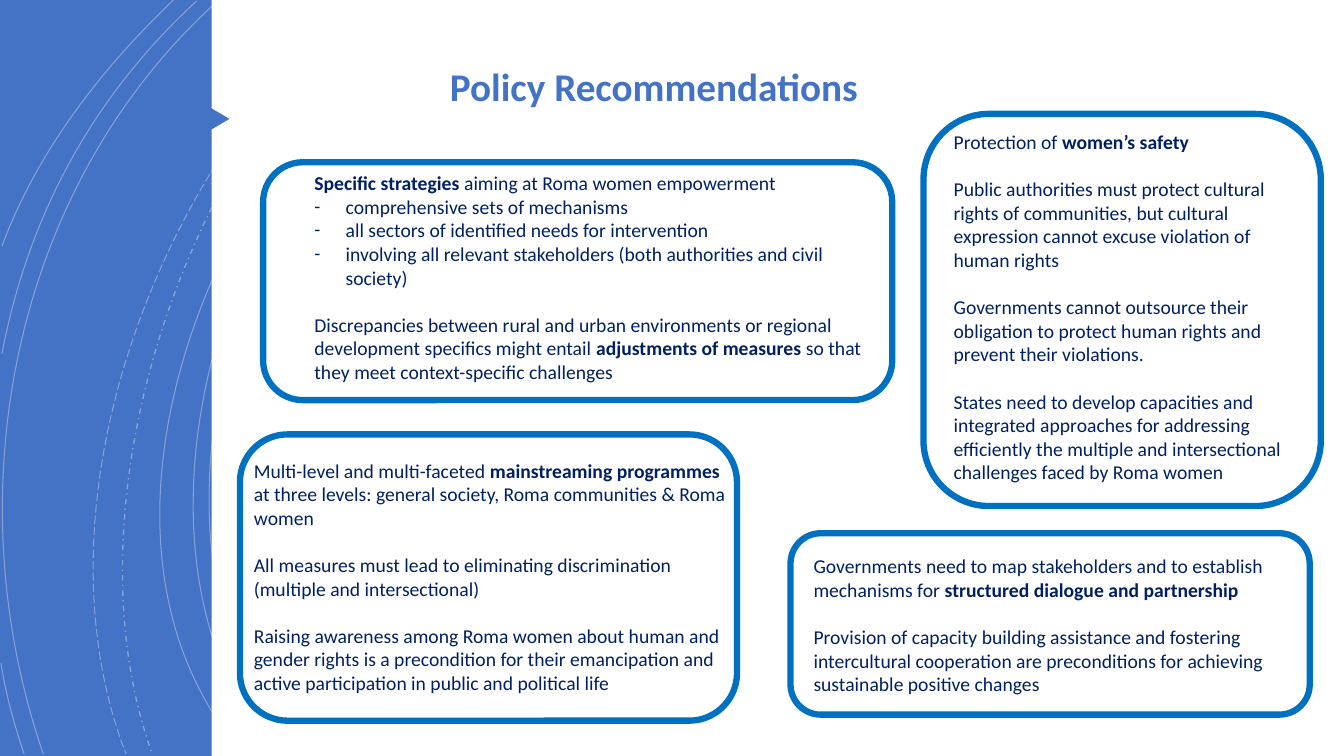
from dataclasses import dataclass
from typing import NamedTuple

from lxml.etree import SubElement
from pptx import Presentation
from pptx.dml.color import RGBColor
from pptx.enum.dml import MSO_LINE
from pptx.enum.shapes import MSO_SHAPE
from pptx.enum.text import MSO_AUTO_SIZE, PP_ALIGN
from pptx.oxml.ns import qn
from pptx.shapes.autoshape import Shape
from pptx.slide import Slide
from pptx.text.text import TextFrame, _Paragraph
from pptx.util import Inches, Pt

FONT = "Calibri"
BLUE, EDGE, NAVY, WHITE = "4472C4", "0070C0", "002060", "FFFFFF"
GAP = 17
INDENT = 0.31

Area = tuple[float, float, float, float]
Point = tuple[float, float]


class Run(NamedTuple):
    text: str
    bold: bool = False


@dataclass
class Para:
    runs: list[Run]
    gap: bool = False
    bullet: bool = False


@dataclass
class Card:
    frame: Area
    text: Area
    paras: list[Para]


@dataclass
class Arc:
    """A cubic curve: start, two control points, end."""
    points: tuple[Point, Point, Point, Point]
    dash: MSO_LINE = MSO_LINE.SOLID
    width: float = 0.75


ARCS = [
    Arc(((4.64, 0), (2.44, 1.33), (1.1, 5.41), (2.94, 7.48))),
    Arc(((4.51, 0), (2.31, 1.38), (0.97, 5.33), (2.72, 7.48))),
    Arc(((4.27, 0), (2.17, 1.47), (0.53, 5.29), (2.41, 7.48))),
    Arc(((3.63, 0), (1.76, 1.66), (0.65, 5.09), (1.51, 7.48)),
        MSO_LINE.DASH_DOT, 1),
    Arc(((3.51, 0), (1.57, 1.69), (0.29, 4.99), (1.25, 7.48)),
        MSO_LINE.LONG_DASH),
    Arc(((2.17, 0), (0.11, 1.85), (-0.46, 4.9), (0.43, 7.48))),
    Arc(((1.95, 0.01), (0.92, 0.96), (0.28, 2.14), (0.02, 3.51))),
    Arc(((0.01, 6.58), (0.06, 6.89), (0.14, 7.19), (0.24, 7.48))),
    Arc(((1.72, 0), (1, 0.69), (0.37, 1.5), (0.02, 2.44))),
]

CARDS = [
    Card((2.61, 1.61, 6.24, 2.36), (3.02, 1.65, 5.62, 2.22), [
        Para([Run("Specific strategies ", True),
              Run("aiming at Roma women empowerment")]),
        Para([Run("comprehensive sets of mechanisms")], bullet=True),
        Para([Run("all sectors of identified needs for intervention")],
             bullet=True),
        Para([Run("involving all relevant stakeholders (both authorities "
                  "and civil society)")], bullet=True),
        Para([Run("Discrepancies between rural and urban environments or "
                  "regional development specifics might entail "),
              Run("adjustments of measures ", True),
              Run("so that they meet context-specific challenges")], gap=True),
    ]),
    Card((9.16, 1.13, 3.94, 3.89), (9.36, 1.24, 3.59, 3.94), [
        Para([Run("Protection of "), Run("women’s safety", True)]),
        Para([Run("Public authorities must protect cultural rights of "
                  "communities, but cultural expression cannot excuse "
                  "violation of human rights")], gap=True),
        Para([Run("Governments cannot outsource their obligation to protect "
                  "human rights and prevent their violations.")], gap=True),
        Para([Run("States need to develop capacities and integrated "
                  "approaches for addressing efficiently the multiple and "
                  "intersectional challenges faced by Roma women")], gap=True),
    ]),
    Card((2.38, 4.31, 4.93, 2.84), (2.42, 4.5, 4.9, 2.46), [
        Para([Run("Multi-level and multi-faceted "),
              Run("mainstreaming programmes ", True),
              Run("at three levels: general society, Roma communities "
                  "& Roma women")]),
        Para([Run("All measures must lead to eliminating discrimination "
                  "(multiple and intersectional)")], gap=True),
        Para([Run("Raising awareness among Roma women about human and gender "
                  "rights is a precondition for their emancipation and active "
                  "participation in public and political life")], gap=True),
    ]),
    Card((7.84, 5.29, 5.15, 1.8), (7.97, 5.45, 4.82, 1.51), [
        Para([Run("Governments need to map stakeholders and to establish "
                  "mechanisms for "),
              Run("structured dialogue and partnership", True)]),
        Para([Run("Provision of capacity building assistance and fostering "
                  "intercultural cooperation are preconditions for achieving "
                  "sustainable positive changes")], gap=True),
    ]),
]


def color(code: str) -> RGBColor:
    return RGBColor.from_string(code)


def add_box(slide: Slide, kind: MSO_SHAPE, area: Area, fill: str,
            edge: str = "") -> Shape:
    box = slide.shapes.add_shape(kind, *map(Inches, area))
    box.shadow.inherit = False
    box.fill.solid()
    box.fill.fore_color.rgb = color(fill)
    if edge:
        box.line.color.rgb = color(edge)
        box.line.width = Pt(4.5)
    else:
        box.line.fill.background()
    return box


def bend(curve: Shape) -> None:
    """Turn the three straight segments of a freeform into one cubic curve."""
    route = curve._element.find(".//" + qn("a:path"))
    lines = route.findall(qn("a:lnTo"))
    cubic = SubElement(route, qn("a:cubicBezTo"))
    for line in lines:
        cubic.append(line[0])
        route.remove(line)


def add_arc(slide: Slide, arc: Arc) -> None:
    start, *rest = [(Inches(x), Inches(y)) for x, y in arc.points]
    pen = slide.shapes.build_freeform(*start)
    pen.add_line_segments(rest, close=False)
    curve = pen.convert_to_shape()
    bend(curve)
    curve.shadow.inherit = False
    curve.fill.background()
    curve.line.color.rgb = color(WHITE)
    curve.line.width = Pt(arc.width)
    curve.line.dash_style = arc.dash
    tint = curve.line._ln.find(".//" + qn("a:srgbClr"))
    SubElement(tint, qn("a:alpha"), val="35000")


def add_frame(slide: Slide, area: Area) -> TextFrame:
    frame = slide.shapes.add_textbox(*map(Inches, area)).text_frame
    frame.word_wrap = True
    return frame


def add_run(para: _Paragraph, part: Run, size: float, code: str) -> None:
    run = para.add_run()
    run.text = part.text
    font = run.font
    font.name, font.size, font.bold = FONT, Pt(size), part.bold
    font.color.rgb = color(code)


def add_dash(para: _Paragraph) -> None:
    """Give the paragraph a hyphen bullet with a hanging indent."""
    props = para._p.get_or_add_pPr()
    props.set("marL", str(Inches(INDENT)))
    props.set("indent", str(-Inches(INDENT)))
    SubElement(props, qn("a:buFont"), typeface=FONT)
    SubElement(props, qn("a:buChar"), char="-")


def add_card(slide: Slide, card: Card) -> None:
    add_box(slide, MSO_SHAPE.ROUNDED_RECTANGLE, card.frame, WHITE, EDGE)
    frame = add_frame(slide, card.text)
    frame.auto_size = MSO_AUTO_SIZE.SHAPE_TO_FIT_TEXT
    for n, item in enumerate(card.paras):
        para = frame.add_paragraph() if n else frame.paragraphs[0]
        if item.gap:
            para.space_before = Pt(GAP)
        if item.bullet:
            add_dash(para)
        for part in item.runs:
            add_run(para, part, 14, NAVY)


def main() -> None:
    deck = Presentation()
    deck.slide_width, deck.slide_height = Inches(13.33), Inches(7.5)
    slide = deck.slides.add_slide(deck.slide_layouts[6])
    add_box(slide, MSO_SHAPE.RECTANGLE, (0, 0, 13.33, 7.5), BLUE)
    for arc in ARCS:
        add_arc(slide, arc)
    add_box(slide, MSO_SHAPE.RECTANGLE, (2.1, 0, 11.23, 7.5), WHITE)
    add_box(slide, MSO_SHAPE.ISOSCELES_TRIANGLE,
            (1.97, 1.04, 0.33, 0.28), BLUE).rotation = 90
    title = add_frame(slide, (3.86, 0.62, 5.25, 0.69)).paragraphs[0]
    title.alignment, title.line_spacing = PP_ALIGN.CENTER, 0.9
    add_run(title, Run("Policy Recommendations", True), 28, BLUE)
    for card in CARDS:
        add_card(slide, card)
    deck.save("out.pptx")


if __name__ == "__main__":
    main()
